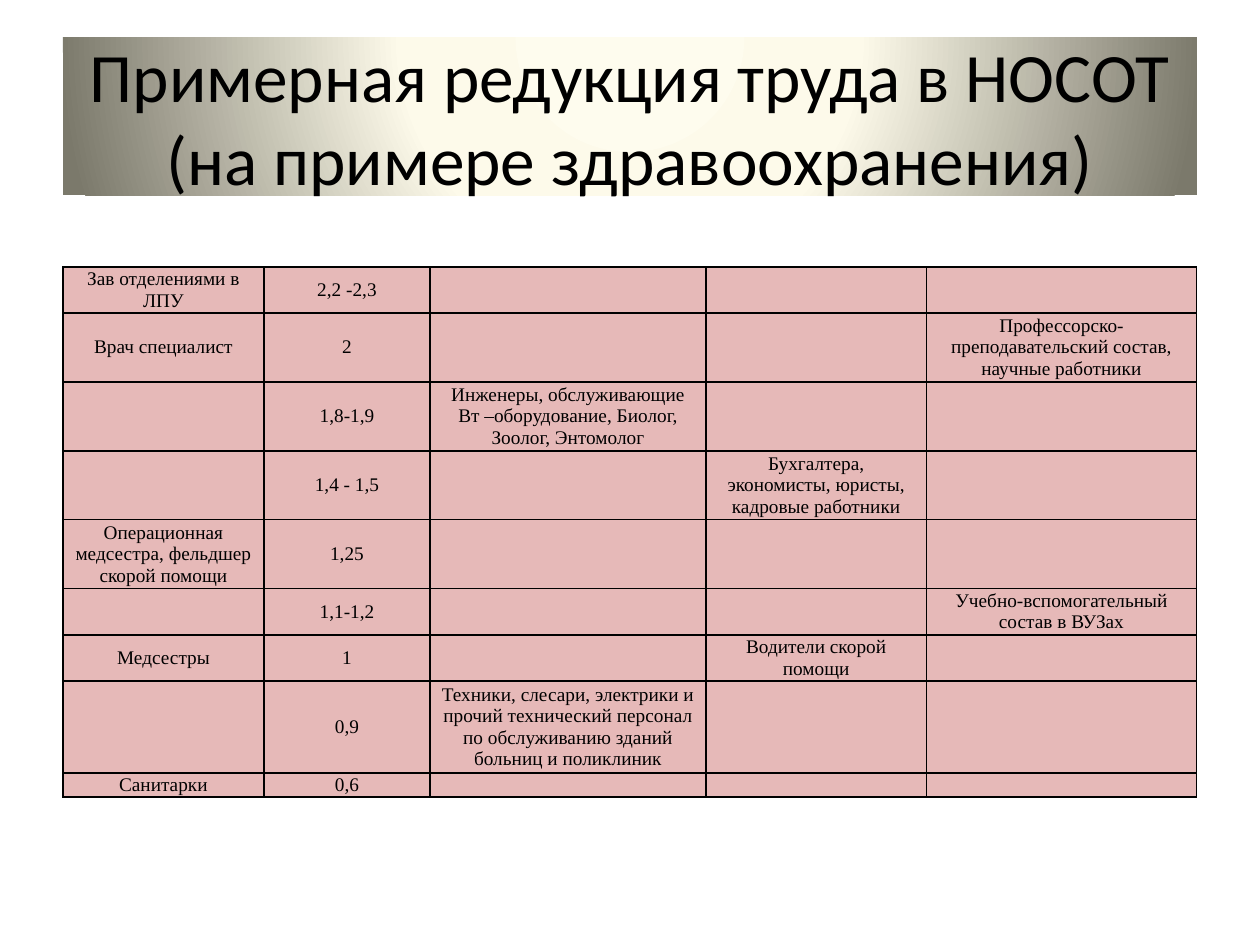
from dataclasses import dataclass

from lxml.etree import SubElement
from pptx import Presentation
from pptx.dml.color import RGBColor
from pptx.enum.shapes import MSO_SHAPE
from pptx.enum.text import MSO_ANCHOR, PP_ALIGN
from pptx.oxml import parse_xml
from pptx.oxml.ns import nsdecls, qn
from pptx.util import Cm, Pt


@dataclass(frozen=True)
class Theme:
    text: str = "000000"
    border: str = "000000"
    cell: str = "E6B9B8"
    title_gradient: tuple = ((0, "FEFCEE"), (40, "FDFAEA"), (100, "7B796B"))
    title_font: str = "Calibri"
    table_font: str = "Times New Roman"
    title_size: float = 39.6
    table_size: float = 11
    border_width: float = 1


THEME = Theme()
LEFT = 1.27
TITLE = "Примерная редукция труда в НОСОТ (на примере здравоохранения)"
COLUMN_WIDTHS = (4.05, 3.35, 5.56, 4.45, 5.44)
ROWS = (
    (0.93, "Зав отделениями в ЛПУ", "2,2 -2,3", "", "", ""),
    (1.39, "Врач специалист", "2", "", "",
     "Профессорско-преподавательский состав, научные работники"),
    (1.39, "", "1,8-1,9",
     "Инженеры, обслуживающие Вт –оборудование, Биолог, Зоолог, Энтомолог", "", ""),
    (1.39, "", "1,4 - 1,5", "",
     "Бухгалтера, экономисты, юристы, кадровые работники", ""),
    (1.39, "Операционная медсестра, фельдшер скорой помощи", "1,25", "", "", ""),
    (0.93, "", "1,1-1,2", "", "", "Учебно-вспомогательный состав в ВУЗах"),
    (0.93, "Медсестры", "1", "", "Водители скорой помощи", ""),
    (1.86, "", "0,9",
     "Техники, слесари, электрики и прочий технический персонал "
     "по обслуживанию зданий больниц и поликлиник", "", ""),
    (0.46, "Санитарки", "0,6", "", "", ""),
)
CELL_FORMAT = {
    "margin_left": Cm(0.18),
    "margin_right": Cm(0.18),
    "margin_top": 0,
    "margin_bottom": 0,
    "vertical_anchor": MSO_ANCHOR.MIDDLE,
}


def apply_format(target, values):
    for name, value in values.items():
        setattr(target, name, value)


def write_text(paragraph, text, font_name, size):
    paragraph.alignment = PP_ALIGN.CENTER
    if text:
        run = paragraph.add_run()
        run.text = text
        apply_format(run.font, {"name": font_name, "size": Pt(size)})
        run.font.color.rgb = RGBColor.from_string(THEME.text)
    else:
        SubElement(paragraph._p, qn("a:endParaRPr"), sz=str(int(size * 100)))


def fill_with_gradient(shape, stops):
    stop_list = "".join(
        f'<a:gs pos="{position * 1000}"><a:srgbClr val="{color}"/></a:gs>'
        for position, color in stops
    )
    gradient = parse_xml(
        f'<a:gradFill {nsdecls("a")} rotWithShape="1"><a:gsLst>{stop_list}</a:gsLst>'
        '<a:path path="circle">'
        '<a:fillToRect l="50000" t="-80000" r="50000" b="180000"/>'
        "</a:path></a:gradFill>"
    )
    shape._element.spPr.find(qn("a:prstGeom")).addnext(gradient)


def add_title(slide):
    shape = slide.shapes.add_shape(
        MSO_SHAPE.RECTANGLE, Cm(LEFT), Cm(0.76), Cm(22.86), Cm(3.18)
    )
    shape.shadow.inherit = False
    fill_with_gradient(shape, THEME.title_gradient)
    shape.line.fill.background()
    frame = shape.text_frame
    apply_format(frame, {"word_wrap": True, "vertical_anchor": MSO_ANCHOR.MIDDLE})
    write_text(frame.paragraphs[0], TITLE, THEME.title_font, THEME.title_size)


def add_borders(cell):
    properties = cell._tc.get_or_add_tcPr()
    for index, side in enumerate("LRTB"):
        border = parse_xml(
            f'<a:ln{side} {nsdecls("a")} w="{Pt(THEME.border_width)}">'
            f'<a:solidFill><a:srgbClr val="{THEME.border}"/></a:solidFill></a:ln{side}>'
        )
        properties.insert(index, border)


def style_cell(cell, text):
    apply_format(cell, CELL_FORMAT)
    cell.fill.solid()
    cell.fill.fore_color.rgb = RGBColor.from_string(THEME.cell)
    add_borders(cell)
    write_text(
        cell.text_frame.paragraphs[0], text, THEME.table_font, THEME.table_size
    )


def add_labour_table(slide):
    heights = [row[0] for row in ROWS]
    table = slide.shapes.add_table(
        len(ROWS), len(COLUMN_WIDTHS), Cm(LEFT), Cm(5.38),
        Cm(sum(COLUMN_WIDTHS)), Cm(sum(heights)),
    ).table
    apply_format(table, {"first_row": False, "horz_banding": False})
    for column, width in zip(table.columns, COLUMN_WIDTHS):
        column.width = Cm(width)
    for table_row, (height, *texts) in zip(table.rows, ROWS):
        table_row.height = Cm(height)
        for cell, text in zip(table_row.cells, texts):
            style_cell(cell, text)


def main():
    presentation = Presentation()
    apply_format(presentation, {"slide_width": Cm(25.4), "slide_height": Cm(19.05)})
    slide = presentation.slides.add_slide(presentation.slide_layouts[6])
    add_labour_table(slide)
    add_title(slide)
    presentation.save("out.pptx")


if __name__ == "__main__":
    main()
